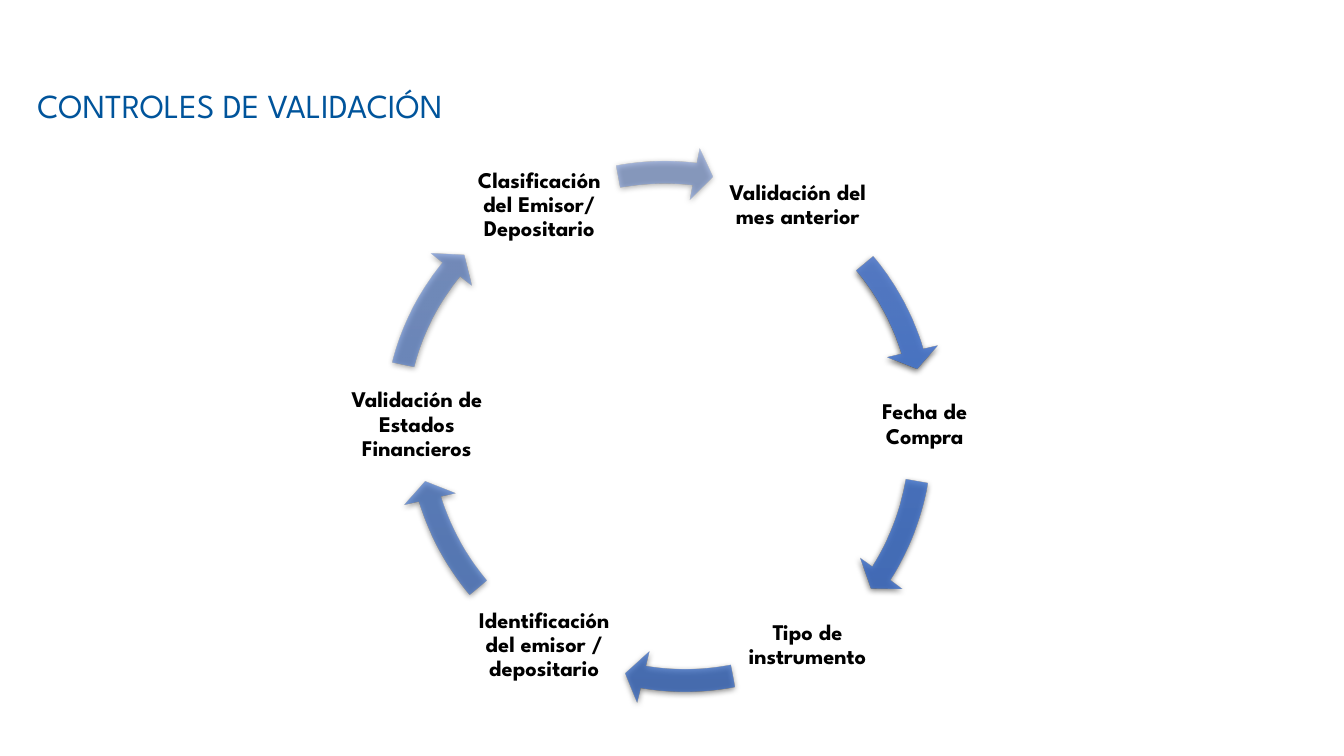
from lxml import etree
from pptx import Presentation
from pptx import util as u
from pptx.dml.color import RGBColor
from pptx.enum import shapes, text
from pptx.oxml import parse_xml
from pptx.oxml.ns import qn

# Content, lengths in cm
FONT = "League Spartan"
TITLE = "CONTROLES DE VALIDACIÓN"
ROWS = {"top": 3.73, "middle": 9.27, "bottom": 14.83}
LABEL_HEIGHT = 2.87
STEPS = [  # label, row, left, width
    ("Validación del mes anterior", "top", 17.96, 4.29),
    ("Fecha de Compra", "middle", 21.87, 2.87),
    ("Tipo de instrumento", "bottom", 18.47, 3.76),
    ("Identificación del emisor / depositario", "bottom", 11.66, 4.11),
    ("Validación de Estados Financieros", "middle", 8.28, 4.45),
    ("Clasificación del Emisor/ Depositario", "top", 11.61, 3.96),
]
RING = 14.02
ARROWS = [  # left, top, width, start degree, end degree
    (9.91, 3.71, RING, 320.06, 342.88),
    (9.83, 4.04, RING, 9.86, 32.26),
    (10.26, 3.78, RING, 79.18, 99.43),
    (9.91, 3.71, RING, 140.06, 162.91),
    (9.35, 3.58, 15.16, 191.78, 214.32),
    (9.75, 3.68, RING, 259.45, 276.7),
]
GRADIENT = [(0, "6183CB"), (50, "3E70CA"), (100, "3062BB")]
FIRST_ALPHA, ALPHA_STEP = 90, 8
THICKNESS, HEAD_DEGREES, HEAD_WIDTH = 0.04, 4.17, 0.047


def rgb(value):
    return RGBColor.from_string(value)


def add_text(page, words, left, top, width, height, size, color="000000",
             bold=False, align=text.PP_ALIGN.LEFT, inset=None):
    box = page.shapes.add_textbox(u.Cm(left), u.Cm(top), u.Cm(width), u.Cm(height))
    frame = box.text_frame
    frame.word_wrap = True
    frame.vertical_anchor = text.MSO_ANCHOR.MIDDLE
    if inset is not None:
        frame.margin_left = frame.margin_right = u.Cm(inset)
        frame.margin_top = frame.margin_bottom = u.Cm(inset)
    para = frame.paragraphs[0]
    para.alignment = align
    para.line_spacing = 0.9
    span = para.add_run()
    span.text = words
    span.font.name, span.font.size, span.font.bold = FONT, u.Pt(size), bold
    span.font.color.rgb = rgb(color)


def add_color(parent, color, alpha):
    node = etree.SubElement(parent, qn("a:srgbClr"), val=color)
    etree.SubElement(node, qn("a:alpha"), val=str(alpha * 1000))


def new_element(tag):
    return parse_xml(f'<a:{tag} xmlns:a="http://schemas.openxmlformats.org/drawingml/2006/main"/>')


def add_arrow(page, left, top, width, start, end, alpha):
    arrow = page.shapes.add_shape(shapes.MSO_SHAPE.CIRCULAR_ARROW, u.Cm(left),
                                  u.Cm(top), u.Cm(width), u.Cm(RING))
    # Angles count 60000 units a degree, adjustments 100000 units a whole
    angles = [degrees * 0.6 for degrees in (HEAD_DEGREES, end, start)]
    for index, value in enumerate([THICKNESS, *angles, HEAD_WIDTH]):
        arrow.adjustments[index] = value
    arrow.line.fill.background()
    line = arrow.line._get_or_add_ln()

    # Translucent vertical gradient
    fill = new_element("gradFill")
    stops = etree.SubElement(fill, qn("a:gsLst"))
    for position, color in GRADIENT:
        stop = etree.SubElement(stops, qn("a:gs"), pos=str(position * 1000))
        add_color(stop, color, alpha)
    etree.SubElement(fill, qn("a:lin"), ang="5400000", scaled="0")
    line.addprevious(fill)

    # Soft shadow below
    effects = new_element("effectLst")
    shadow = etree.SubElement(effects, qn("a:outerShdw"), blurRad=str(u.Pt(4.5)),
                              dist=str(u.Pt(1.5)), dir="5400000", rotWithShape="0")
    add_color(shadow, "000000", 63)
    line.addnext(effects)


def main():
    deck = Presentation()
    deck.slide_width, deck.slide_height = u.Cm(33.87), u.Cm(19.05)
    page = deck.slides.add_slide(deck.slide_layouts[6])

    add_text(page, TITLE, 0.69, 0.86, 29.21, 3.68, size=24, color="00549B")

    # Cycle: each label is followed by its arrow, ever paler
    for index, (step, arrow) in enumerate(zip(STEPS, ARROWS)):
        label, row, left, width = step
        add_text(page, label, left, ROWS[row], width, LABEL_HEIGHT, size=16,
                 bold=True, align=text.PP_ALIGN.CENTER, inset=0.05)
        add_arrow(page, *arrow, alpha=FIRST_ALPHA - ALPHA_STEP * index)

    deck.save("out.pptx")


if __name__ == "__main__":
    main()
